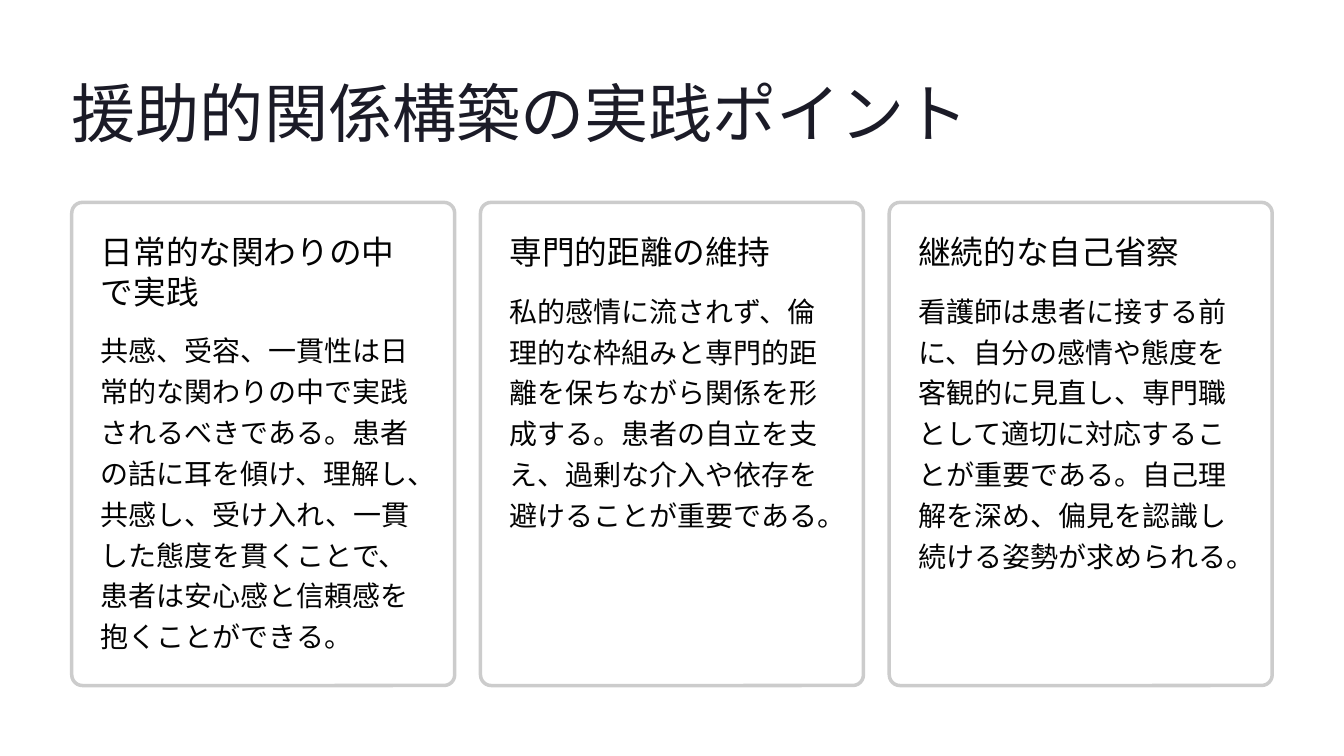
from dataclasses import dataclass

from lxml import etree
from pptx import Presentation
from pptx.dml.color import RGBColor
from pptx.enum.shapes import MSO_SHAPE
from pptx.enum.text import MSO_ANCHOR, MSO_AUTO_SIZE, PP_ALIGN
from pptx.oxml.ns import qn
from pptx.util import Cm, Pt

ROUNDED = MSO_SHAPE.ROUNDED_RECTANGLE
TOP = MSO_ANCHOR.TOP
NO_AUTOFIT = MSO_AUTO_SIZE.NONE
LEFT = PP_ALIGN.LEFT
TITLE_ONLY = 5


@dataclass(frozen=True)
class TextStyle:
    font: str
    size: float
    leading: float
    color: RGBColor


@dataclass(frozen=True)
class Theme:
    title: TextStyle = TextStyle("Inter", 55, 68.5, RGBColor(0x1B, 0x1B, 0x27))
    heading: TextStyle = TextStyle("Inter", 28, 34, RGBColor(0x03, 0x03, 0x03))
    body: TextStyle = TextStyle("Roboto", 24, 35, RGBColor(0x03, 0x03, 0x03))
    card_fill: RGBColor = RGBColor(0xFF, 0xFF, 0xFF)
    card_border: RGBColor = RGBColor(0xCC, 0xCC, 0xCC)
    card_opacity: int = 95
    border_width: float = 3
    corner: float = 0.028


THEME = Theme()
TITLE = "援助的関係構築の実践ポイント"

# Heading, its line count, body, its line count
PRACTICE_POINTS = [
    ("日常的な関わりの中で実践", 2,
     "共感、受容、一貫性は日常的な関わりの中で実践されるべきである。"
     "患者の話に耳を傾け、理解し、共感し、受け入れ、一貫した態度を貫くことで、"
     "患者は安心感と信頼感を抱くことができる。", 8),
    ("専門的距離の維持", 1,
     "私的感情に流されず、倫理的な枠組みと専門的距離を保ちながら関係を形成する。"
     "患者の自立を支え、過剰な介入や依存を避けることが重要である。", 6),
    ("継続的な自己省察", 1,
     "看護師は患者に接する前に、自分の感情や態度を客観的に見直し、"
     "専門職として適切に対応することが重要である。"
     "自己理解を深め、偏見を認識し続ける姿勢が求められる。", 7),
]


def write_text(holder, text, style):
    frame = holder.text_frame
    frame_format = {
        "margin_left": 0, "margin_top": 0, "margin_right": 0, "margin_bottom": 0,
        "word_wrap": True, "auto_size": NO_AUTOFIT, "vertical_anchor": TOP,
    }
    for attribute, value in frame_format.items():
        setattr(frame, attribute, value)
    paragraph = frame.paragraphs[0]
    paragraph.alignment = LEFT
    paragraph.line_spacing = Pt(style.leading)
    run = paragraph.add_run()
    run.text = text
    run.font.name = style.font
    run.font.size = Pt(style.size)
    run.font.color.rgb = style.color


def place_title(slide, left, top, width, height):
    title = slide.shapes.title
    title.left, title.top, title.width, title.height = left, top, width, height
    write_text(title, TITLE, THEME.title)


def draw_panel(slide, left, top, width, height):
    panel = slide.shapes.add_shape(ROUNDED, left, top, width, height)
    panel.adjustments[0] = THEME.corner
    panel.shadow.inherit = False
    panel.fill.solid()
    panel.fill.fore_color.rgb = THEME.card_fill
    color = panel.fill._xPr.find(qn("a:solidFill"))[0]
    etree.SubElement(color, qn("a:alpha"), val=str(THEME.card_opacity * 1000))
    panel.line.color.rgb = THEME.card_border
    panel.line.width = Pt(THEME.border_width)


def draw_card(slide, point, left, top, width, height):
    heading, heading_lines, body, body_lines = point
    draw_panel(slide, left, top, width, height)
    padding = Cm(0.88)
    text_width = width - 2 * padding
    text_top = top + padding
    for text, lines, style in ((heading, heading_lines, THEME.heading),
                               (body, body_lines, THEME.body)):
        text_height = Pt(style.leading * lines)
        box = slide.shapes.add_textbox(left + padding, text_top, text_width, text_height)
        write_text(box, text, style)
        text_top += text_height + Cm(0.48)


def draw_cards(slide, left, top, width, height):
    gap = Cm(0.78)
    count = len(PRACTICE_POINTS)
    card_width = (width - gap * (count - 1)) // count
    for index, point in enumerate(PRACTICE_POINTS):
        draw_card(slide, point, left + index * (card_width + gap), top, card_width, height)


def main():
    deck = Presentation()
    deck.slide_width, deck.slide_height = Cm(40.64), Cm(22.86)
    slide = deck.slides.add_slide(deck.slide_layouts[TITLE_ONLY])
    margin = Cm(2.17)
    content_width = deck.slide_width - 2 * margin
    place_title(slide, margin, Cm(2.13), content_width, Cm(2.44))
    draw_cards(slide, margin, Cm(6.12), content_width, Cm(14.61))
    deck.save("out.pptx")


if __name__ == "__main__":
    main()
